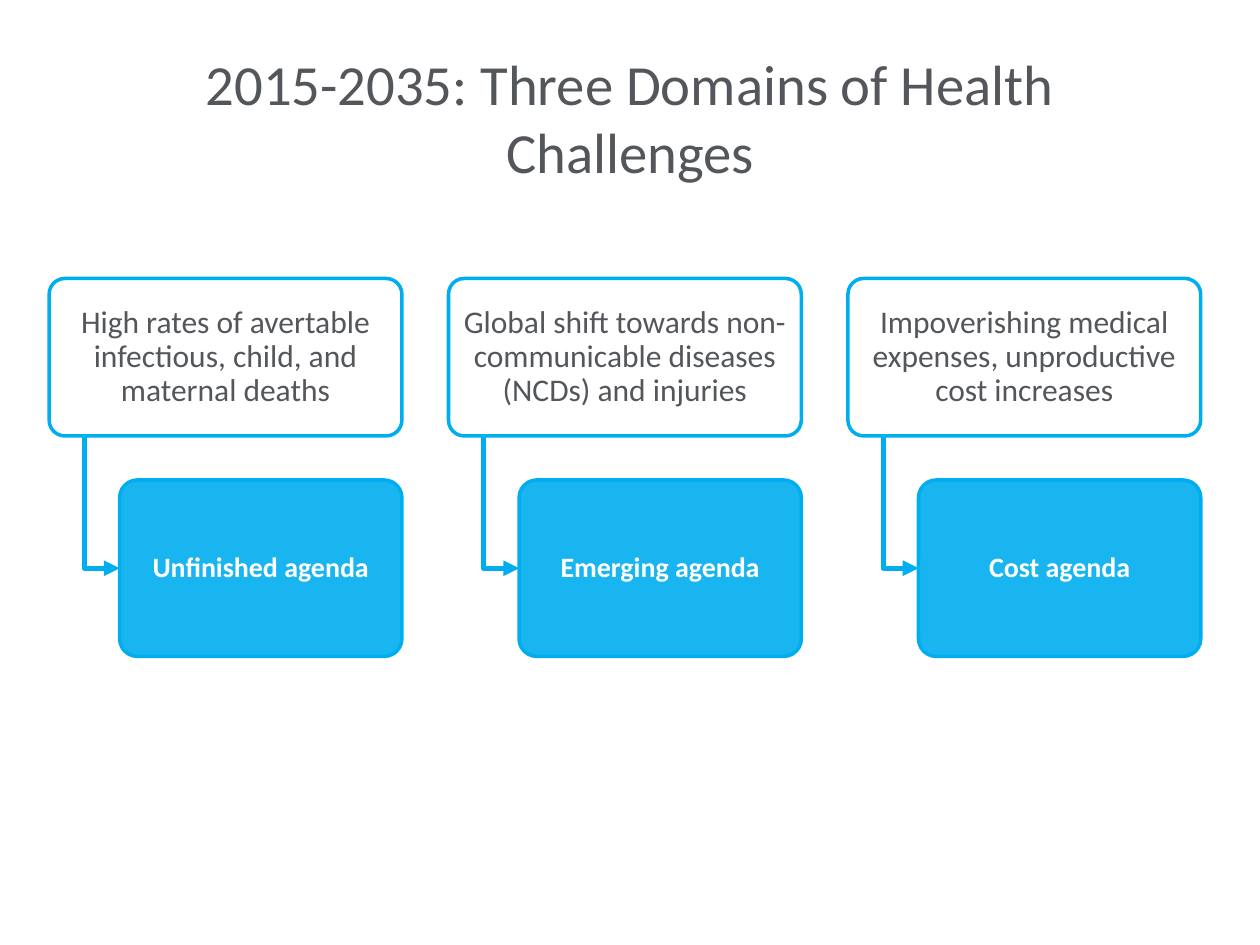
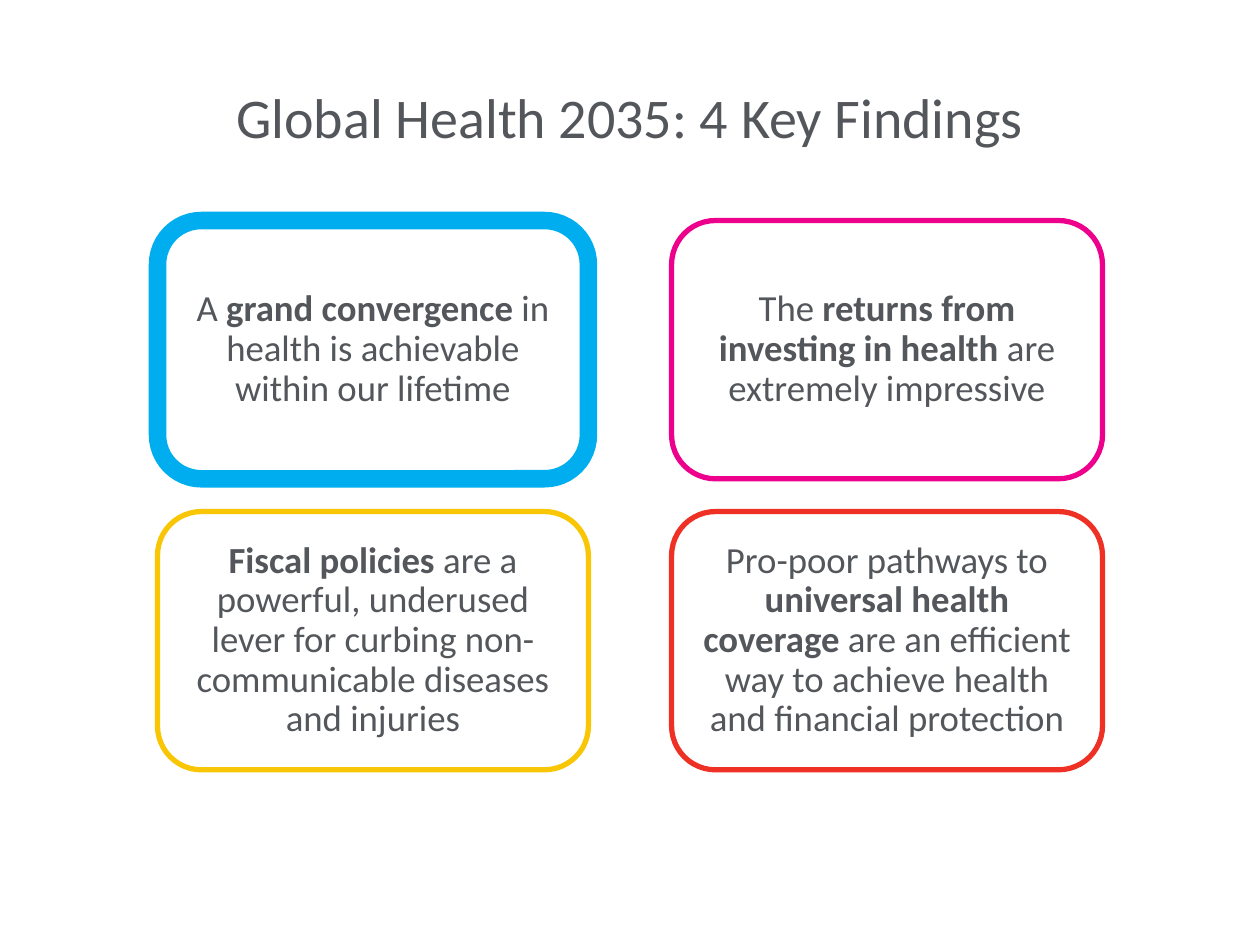
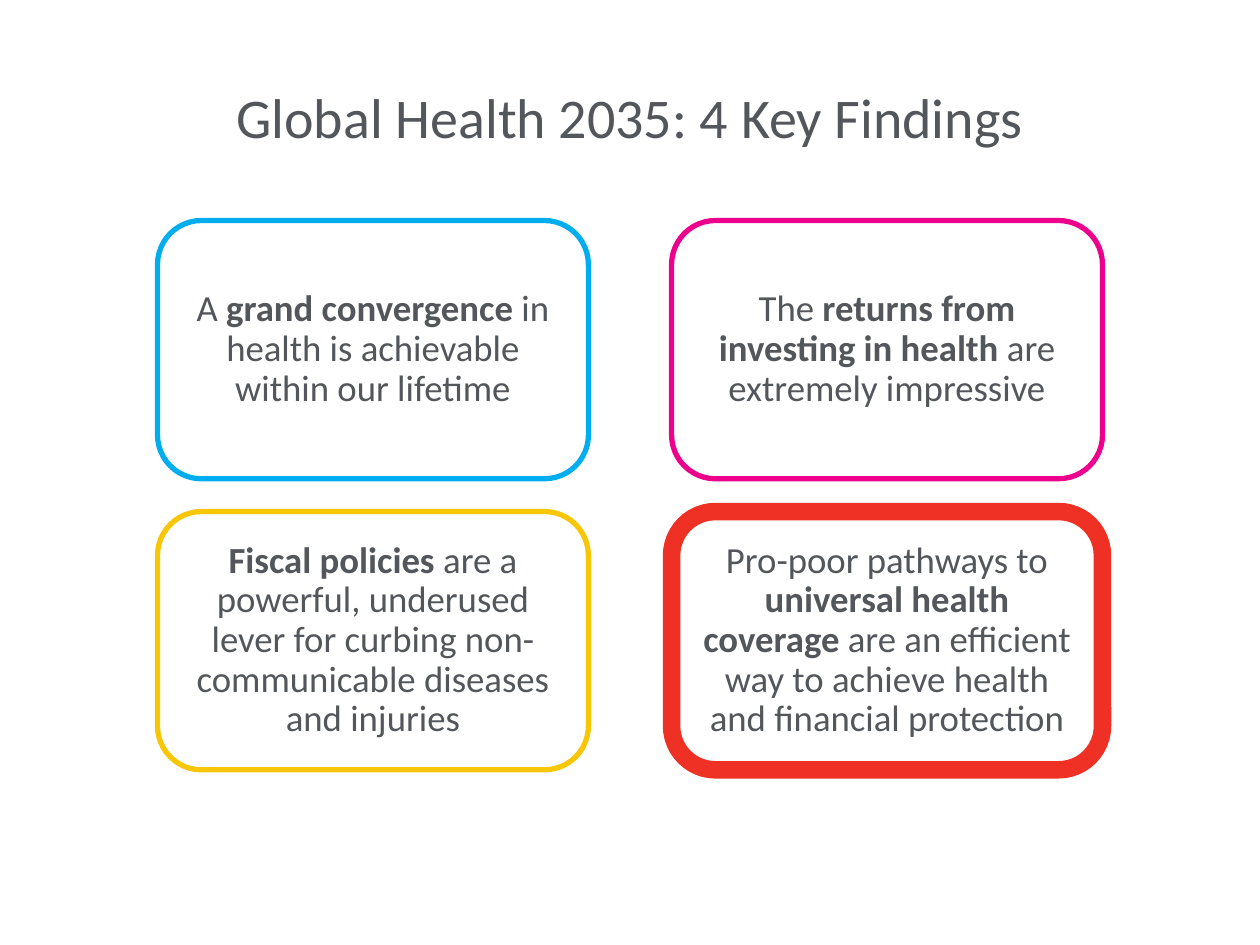
from dataclasses import dataclass

from lxml import etree
from pptx import Presentation
from pptx.dml.color import RGBColor
from pptx.enum.shapes import MSO_SHAPE
from pptx.enum.text import MSO_ANCHOR, PP_ALIGN
from pptx.oxml.ns import qn
from pptx.util import Inches, Pt

ROUNDED = MSO_SHAPE.ROUNDED_RECTANGLE
MIDDLE = MSO_ANCHOR.MIDDLE
CENTER = PP_ALIGN.CENTER


@dataclass(frozen=True)
class Theme:
    font: str = "Calibri"
    gray: RGBColor = RGBColor.from_string("53565A")
    white: RGBColor = RGBColor.from_string("FFFFFF")
    blue: RGBColor = RGBColor.from_string("00AEEF")
    pink: RGBColor = RGBColor.from_string("EC008C")
    yellow: RGBColor = RGBColor.from_string("F9C606")
    red: RGBColor = RGBColor.from_string("EE3124")
    long_title_size: float = 32.4
    title_size: float = 32
    finding_size: float = 21
    challenge_size: float = 18
    agenda_size: float = 16
    box_line: float = 2
    thin_line: float = 3
    thick_line: float = 10


theme = Theme()


def write_text(shape, runs, size, color, inset, line_spacing=1.0):
    """Fill a shape with one centred paragraph; runs are (text, bold) pairs."""
    frame = shape.text_frame
    frame_format = {
        "word_wrap": True,
        "vertical_anchor": MIDDLE,
        "margin_left": Inches(inset),
        "margin_right": Inches(inset),
        "margin_top": Inches(inset),
        "margin_bottom": Inches(inset),
    }
    for name, value in frame_format.items():
        setattr(frame, name, value)
    paragraph = frame.paragraphs[0]
    paragraph.alignment = CENTER
    paragraph.line_spacing = line_spacing
    for text, bold in runs:
        run = paragraph.add_run()
        run.text = text
        font_format = {"name": theme.font, "size": Pt(size), "bold": bold}
        for name, value in font_format.items():
            setattr(run.font, name, value)
        run.font.color.rgb = color


def add_card(slide, box, fill, line_color, line_width, corner):
    """Add a rounded box; box is (left, top, width, height) in inches."""
    card = slide.shapes.add_shape(ROUNDED, *map(Inches, box))
    card.shadow.inherit = False
    card.adjustments[0] = corner
    card.fill.solid()
    card.fill.fore_color.rgb = fill
    card.line.color.rgb = line_color
    card.line.width = Pt(line_width)
    return card


presentation = Presentation()
presentation.slide_width = Inches(10)
presentation.slide_height = Inches(7.5)

# Slides and titles
titles = [
    ("2015-2035: Three Domains of Health Challenges", theme.long_title_size),
    ("Global Health 2035: 4 Key Findings", theme.title_size),
    ("Global Health 2035: 4 Key Findings", theme.title_size),
]
slides = []
for title, size in titles:
    slide = presentation.slides.add_slide(presentation.slide_layouts[6])
    title_box = slide.shapes.add_textbox(*map(Inches, (0.5, 0.3, 9, 1.25)))
    write_text(title_box, [(title, False)], size, theme.gray, inset=0.2)
    slides.append(slide)
domains_slide, *findings_slides = slides

# Three domains: a challenge above, its agenda hanging below to the right
domains = [
    ("High rates of avertable infectious, child, and maternal deaths", "Unfinished agenda"),
    ("Global shift towards non-communicable diseases (NCDs) and injuries", "Emerging agenda"),
    ("Impoverishing medical expenses, unproductive cost increases", "Cost agenda"),
]
domain_left, domain_pitch, domain_width = 0.39, 3.17, 2.8
challenge_top, challenge_height = 2.21, 1.25
agenda_top, agenda_height = 3.81, 1.4
challenge_bottom = challenge_top + challenge_height
agenda_middle = agenda_top + agenda_height / 2

for column, (challenge, agenda) in enumerate(domains):
    left = domain_left + column * domain_pitch
    stem_left = left + 0.1 * domain_width
    agenda_left = left + 0.2 * domain_width

    challenge_card = add_card(
        domains_slide, (left, challenge_top, domain_width, challenge_height),
        theme.white, theme.blue, theme.box_line, corner=0.1)
    write_text(challenge_card, [(challenge, False)], theme.challenge_size,
               theme.gray, inset=0.04, line_spacing=0.9)

    builder = domains_slide.shapes.build_freeform(
        Inches(stem_left), Inches(challenge_bottom))
    builder.add_line_segments(
        [(Inches(stem_left), Inches(agenda_middle)),
         (Inches(agenda_left), Inches(agenda_middle))], close=False)
    elbow = builder.convert_to_shape()
    elbow.shadow.inherit = False
    elbow.fill.background()
    elbow.line.color.rgb = theme.blue
    elbow.line.width = Pt(theme.thin_line)
    outline = elbow.element.spPr.find(qn("a:ln"))
    etree.SubElement(outline, qn("a:tailEnd"), type="triangle")

    agenda_card = add_card(
        domains_slide, (agenda_left, agenda_top, 0.8 * domain_width, agenda_height),
        theme.blue, theme.blue, theme.box_line, corner=0.1)
    fill_color = agenda_card.element.spPr.find(qn("a:solidFill"))[0]
    etree.SubElement(fill_color, qn("a:alpha"), val="90000")
    write_text(agenda_card, [(agenda, True)], theme.agenda_size,
               theme.white, inset=0.03, line_spacing=0.9)

# Four findings in a two by two grid, one of them emphasised on each slide
findings = [
    (theme.blue, [("A ", False), ("grand convergence", True),
                  (" in health is achievable within our lifetime", False)]),
    (theme.pink, [("The ", False), ("returns from investing in health", True),
                  (" are extremely impressive", False)]),
    (theme.yellow, [("Fiscal policies ", True),
                    ("are a powerful, underused lever for curbing "
                     "non-communicable diseases and injuries", False)]),
    (theme.red, [("Pro-poor pathways to ", False), ("universal health coverage ", True),
                 ("are an efficient way to achieve health and financial protection", False)]),
]
finding_left, finding_top = 1.25, 1.75
finding_width, finding_height = 3.42, 2.05
column_pitch, row_pitch = 4.08, 2.31

for slide, emphasised in zip(findings_slides, (theme.blue, theme.red)):
    for index, (color, runs) in enumerate(findings):
        row, column = divmod(index, 2)
        box = (finding_left + column * column_pitch, finding_top + row * row_pitch,
               finding_width, finding_height)
        line_width = theme.thick_line if color == emphasised else theme.thin_line
        card = add_card(slide, box, theme.white, color, line_width, corner=0.17)
        write_text(card, runs, theme.finding_size, theme.gray,
                   inset=0.09, line_spacing=0.9)

presentation.save("out.pptx")
